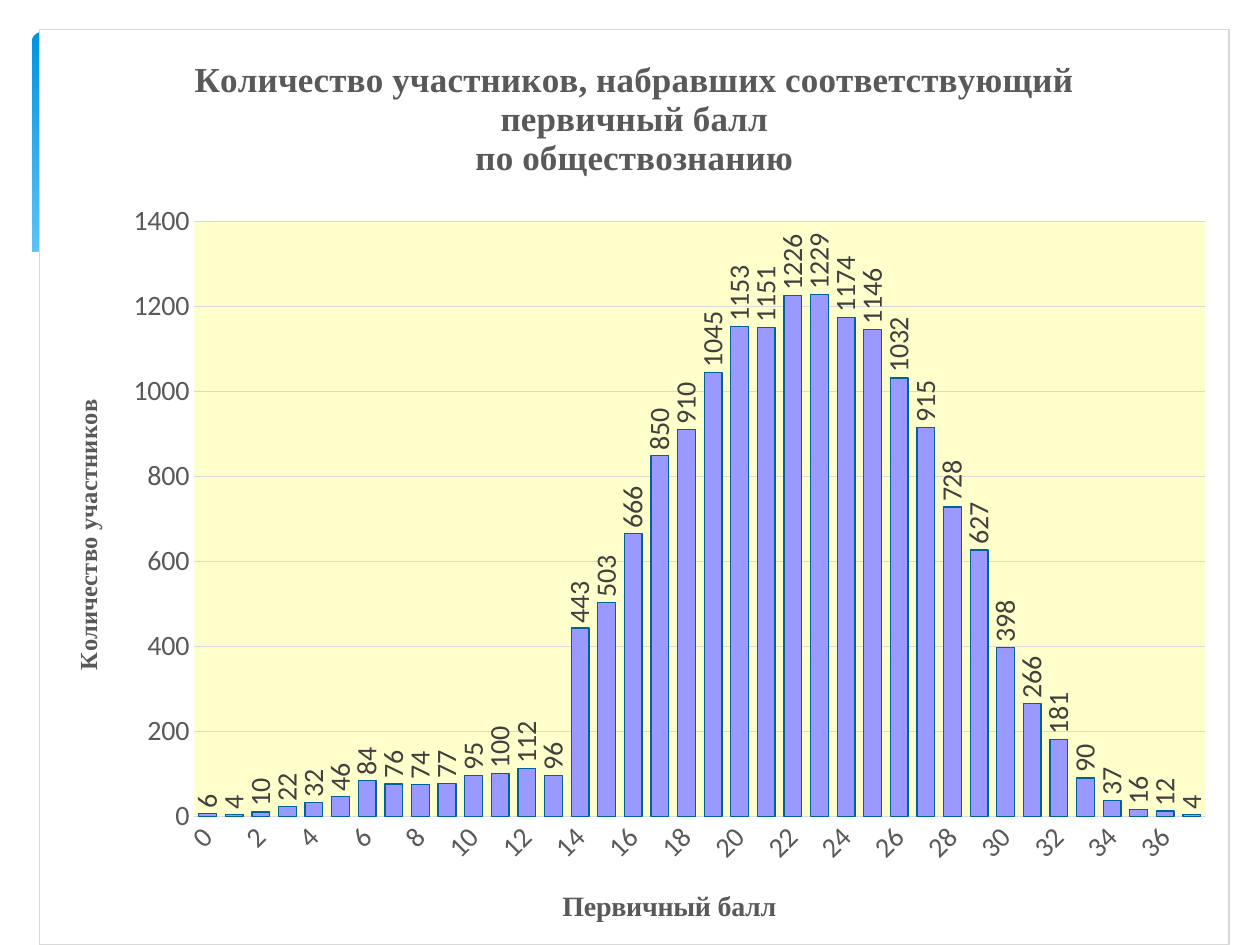
"""Build a slide with a column chart of primary scores in social studies."""
import pptx
import pptx.chart.data
import pptx.dml.color
import pptx.enum.chart
import pptx.enum.shapes
import pptx.oxml
import pptx.oxml.ns
import pptx.util

Inches = pptx.util.Inches
Pt = pptx.util.Pt
qn = pptx.oxml.ns.qn
enum = pptx.enum.chart

COLORS = {
    "sky": "0293E0", "pale": "83D3FE", "white": "FFFFFF", "cream": "FFFFCC",
    "bar": "9999FF", "edge": "016296", "grid": "D9D9D9",
    "grey": "595959", "dark": "404040", "black": "000000",
}
SCORES = [6, 4, 10, 22, 32, 46, 84, 76, 74, 77, 95, 100, 112, 96, 443, 503,
          666, 850, 910, 1045, 1153, 1151, 1226, 1229, 1174, 1146, 1032, 915,
          728, 627, 398, 266, 181, 90, 37, 16, 12, 4]
WAVE = [(0.23, 2.13), (0.46, 2.03), (0.85, 1.93), (1.32, 1.86), (1.93, 1.84),
        (2.71, 1.88), (3.65, 2.02), (4.47, 2.2), (5.55, 2.45), (6.68, 2.65),
        (7.93, 2.76), (8.75, 2.73), (9.3, 2.62), (9.77, 2.46), (9.77, 3.29),
        (0.23, 3.29)]
NS = ('xmlns:c="http://schemas.openxmlformats.org/drawingml/2006/chart" '
      'xmlns:a="http://schemas.openxmlformats.org/drawingml/2006/main"')


def rgb(name):
    return pptx.dml.color.RGBColor.from_string(COLORS[name])


def assign(item, values):
    for key, value in values.items():
        setattr(item, key, value)


def style(font, size, color, name="Calibri", bold=False):
    assign(font, {"size": Pt(size), "name": name, "bold": bold})
    font.color.rgb = rgb(color)


def stroke(line, color):
    line.color.rgb = rgb(color)
    line.width = Pt(0.75)


def paint(shape, color):
    shape.fill.solid()
    shape.fill.fore_color.rgb = rgb(color)


def head(title, text, size, turn=None):
    frame = title.text_frame
    frame.text = text
    for para in frame.paragraphs:
        for run in para.runs:
            style(run.font, size, "grey", "Times New Roman", True)
    if turn is not None:
        rotate(frame._txBody, turn)


def rotate(text, angle):
    body = text.find(qn("a:bodyPr"))
    body.set("rot", str(angle * 60000))
    body.set("vert", "horz")


def area(fill, edge=None):
    line = "<a:noFill/>"
    if edge:
        line = f'<a:solidFill><a:srgbClr val="{COLORS[edge]}"/></a:solidFill>'
    return pptx.oxml.parse_xml(
        f'<c:spPr {NS}><a:solidFill><a:srgbClr val="{COLORS[fill]}"/>'
        f'</a:solidFill><a:ln w="9525">{line}</a:ln></c:spPr>')


def place(plot, x, y, w, h):
    for old in plot.findall(qn("c:layout")):
        plot.remove(old)
    sizes = "".join(f'<c:{key} val="{value}"/>' for key, value in
                    zip("xywh", (x, y, w, h)))
    plot.insert(0, pptx.oxml.parse_xml(
        f'<c:layout {NS}><c:manualLayout><c:layoutTarget val="inner"/>'
        f'<c:xMode val="edge"/><c:yMode val="edge"/>{sizes}'
        '</c:manualLayout></c:layout>'))


def add_back(slide):
    box = slide.shapes.add_shape(
        pptx.enum.shapes.MSO_SHAPE.ROUNDED_RECTANGLE,
        Inches(0.25), Inches(0.25), Inches(9.51), Inches(2.7))
    box.adjustments[0] = 0.034
    box.fill.gradient()
    box.fill.gradient_angle = 270
    for stop, name, spot in zip(box.fill.gradient_stops, ("sky", "pale"), (0, 0.9)):
        stop.color.rgb = rgb(name)
        stop.position = spot
    path = slide.shapes.build_freeform(*WAVE[0], scale=Inches(1))
    path.add_line_segments(WAVE[1:], close=True)
    wave = path.convert_to_shape()
    paint(wave, "white")
    for shape in (box, wave):
        shape.line.fill.background()
        shape.shadow.inherit = False


def set_axis(axis, text, size, turn):
    assign(axis, {"major_tick_mark": enum.XL_TICK_MARK.NONE,
                  "minor_tick_mark": enum.XL_TICK_MARK.NONE,
                  "has_title": True})
    style(axis.tick_labels.font, 16, "grey")
    head(axis.axis_title, text, size, turn)


def set_bars(plot):
    assign(plot, {"gap_width": 50, "vary_by_categories": False,
                  "has_data_labels": True})
    bars = plot.series[0]
    paint(bars.format, "bar")
    stroke(bars.format.line, "edge")
    labels = plot.data_labels
    assign(labels, {"show_value": True,
                    "position": enum.XL_LABEL_POSITION.OUTSIDE_END})
    style(labels.font, 16, "dark")
    rotate(labels._element.find(qn("c:txPr")), -90)


def add_chart(slide):
    data = pptx.chart.data.CategoryChartData()
    data.categories = [str(n) for n in range(len(SCORES))]
    data.add_series("Series 1", SCORES)
    chart = slide.shapes.add_chart(
        enum.XL_CHART_TYPE.COLUMN_CLUSTERED, Inches(0.31), Inches(0.23),
        Inches(9.45), Inches(7.27), data).chart
    assign(chart, {"has_legend": False, "has_title": True})
    style(chart.font, 10, "black")
    head(chart.chart_title, "Количество участников, набравших соответствующий "
         "первичный балл\nпо обществознанию", 20)
    chart.chart_title.include_in_layout = False

    cats, vals = chart.category_axis, chart.value_axis
    set_axis(cats, "Первичный балл", 16, 0)
    set_axis(vals, "Количество участников", 14, -90)
    stroke(cats.format.line, "grid")
    rotate(cats._element.find(qn("c:txPr")), -45)
    cats._element.find(qn("c:noMultiLvlLbl")).addprevious(
        pptx.oxml.parse_xml(f'<c:tickLblSkip {NS} val="2"/>'))
    assign(vals, {"minimum_scale": 0, "maximum_scale": 1400,
                  "major_unit": 200, "has_major_gridlines": True})
    vals.format.line.fill.background()
    stroke(vals.major_gridlines.format.line, "grid")
    set_bars(chart.plots[0])

    root = chart.element.find(qn("c:chart"))
    root.addnext(area("white", "grid"))
    plot = root.find(qn("c:plotArea"))
    plot.append(area("cream"))
    place(plot, 0.13, 0.21, 0.85, 0.65)


def main():
    deck = pptx.Presentation()
    assign(deck, {"slide_width": Inches(10), "slide_height": Inches(7.5)})
    slide = deck.slides.add_slide(deck.slide_layouts[6])
    add_back(slide)
    add_chart(slide)
    deck.save("out.pptx")


if __name__ == "__main__":
    main()
